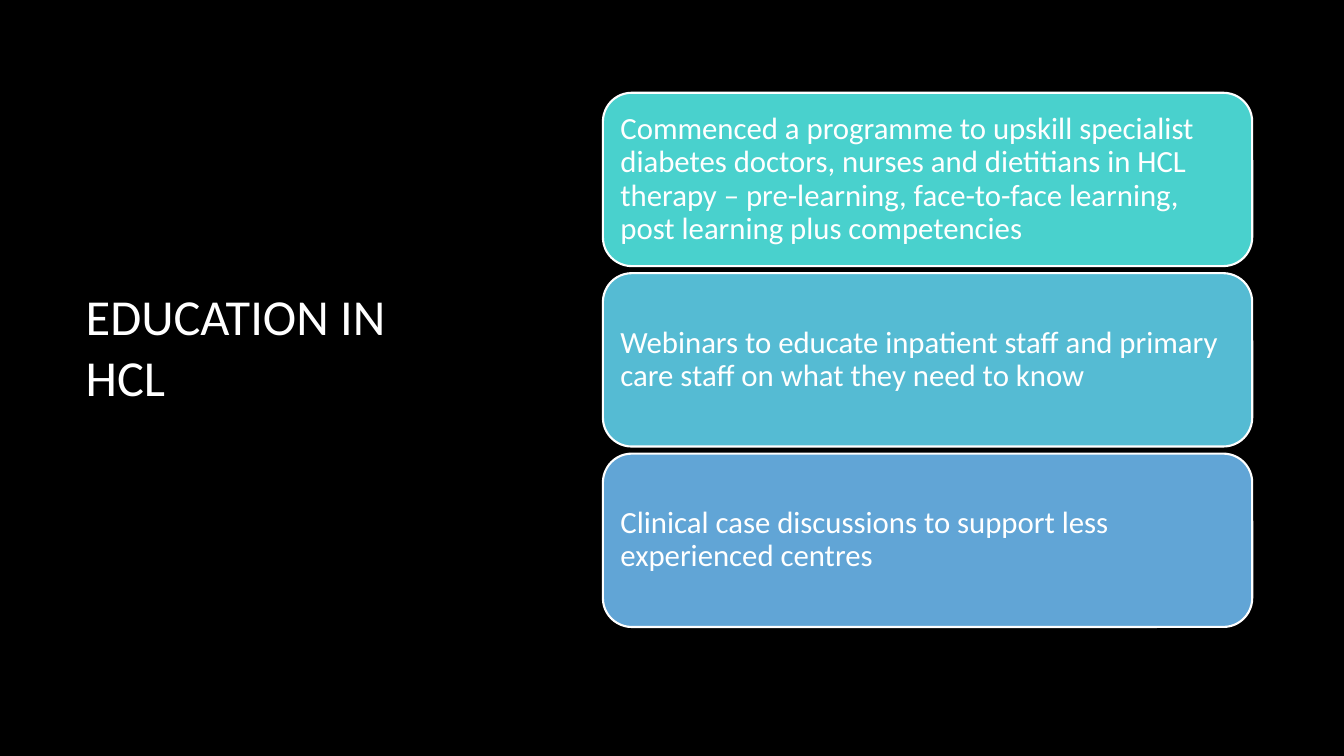
from pptx import Presentation
from pptx.dml.color import RGBColor
from pptx.enum.shapes import MSO_SHAPE
from pptx.enum.text import MSO_ANCHOR, MSO_AUTO_SIZE, PP_ALIGN
from pptx.util import Inches, Pt

BLACK = RGBColor(0x00, 0x00, 0x00)
WHITE = RGBColor(0xFF, 0xFF, 0xFF)
TURQUOISE = RGBColor(0x49, 0xD1, 0xCD)
TEAL = RGBColor(0x55, 0xBB, 0xD3)
BLUE = RGBColor(0x61, 0xA5, 0xD6)

# Card grid: one column, equal rows (inches)
CARD_LEFT, CARD_TOP = 5.98, 0.92
CARD_WIDTH, CARD_HEIGHT = 6.44, 1.72
ROW_PITCH = 1.79


def write_text(tf, text, size, color=WHITE, font="Calibri", inset=0.1, spacing=1.0):
    tf.word_wrap = True
    tf.auto_size = MSO_AUTO_SIZE.NONE
    tf.vertical_anchor = MSO_ANCHOR.MIDDLE
    tf.margin_left = tf.margin_right = Inches(inset)
    tf.margin_top = tf.margin_bottom = Inches(inset)
    p = tf.paragraphs[0]
    p.alignment = PP_ALIGN.LEFT
    p.line_spacing = spacing
    r = p.add_run()
    r.text = text
    r.font.name = font
    r.font.size = Pt(size)
    r.font.color.rgb = color


class Deck:
    """Holds the style and the current slide."""

    def __init__(self, prs, background=BLACK, outline=WHITE):
        self.outline = outline
        self.s = prs.slides.add_slide(prs.slide_layouts[5])
        fill = self.s.background.fill
        fill.solid()
        fill.fore_color.rgb = background

    def title(self, text, left, top, width, height):
        sp = self.s.shapes.title
        sp.left, sp.top = Inches(left), Inches(top)
        sp.width, sp.height = Inches(width), Inches(height)
        write_text(sp.text_frame, text, 36)

    def card(self, row, text, color):
        sp = self.s.shapes.add_shape(
            MSO_SHAPE.ROUNDED_RECTANGLE,
            Inches(CARD_LEFT), Inches(CARD_TOP + row * ROW_PITCH),
            Inches(CARD_WIDTH), Inches(CARD_HEIGHT))
        sp.shadow.inherit = False
        sp.fill.solid()
        sp.fill.fore_color.rgb = color
        sp.line.color.rgb = self.outline
        sp.line.width = Pt(1.5)
        write_text(sp.text_frame, text, 22, inset=0.09, spacing=0.9)


def main():
    prs = Presentation()
    prs.slide_width, prs.slide_height = Inches(13.33), Inches(7.5)
    deck = Deck(prs)

    # Title on the left
    deck.title("EDUCATION IN HCL", 0.75, 0.7, 3.67, 5.46)

    # Stacked cards on the right
    cards = [
        ("Commenced a programme to upskill specialist diabetes doctors, nurses "
         "and dietitians in HCL therapy – pre-learning, face-to-face learning, "
         "post learning plus competencies", TURQUOISE),
        ("Webinars to educate inpatient staff and primary care staff on what "
         "they need to know", TEAL),
        ("Clinical case discussions to support less experienced centres", BLUE),
    ]
    for row, (text, color) in enumerate(cards):
        deck.card(row, text, color)

    prs.save("out.pptx")


if __name__ == "__main__":
    main()
